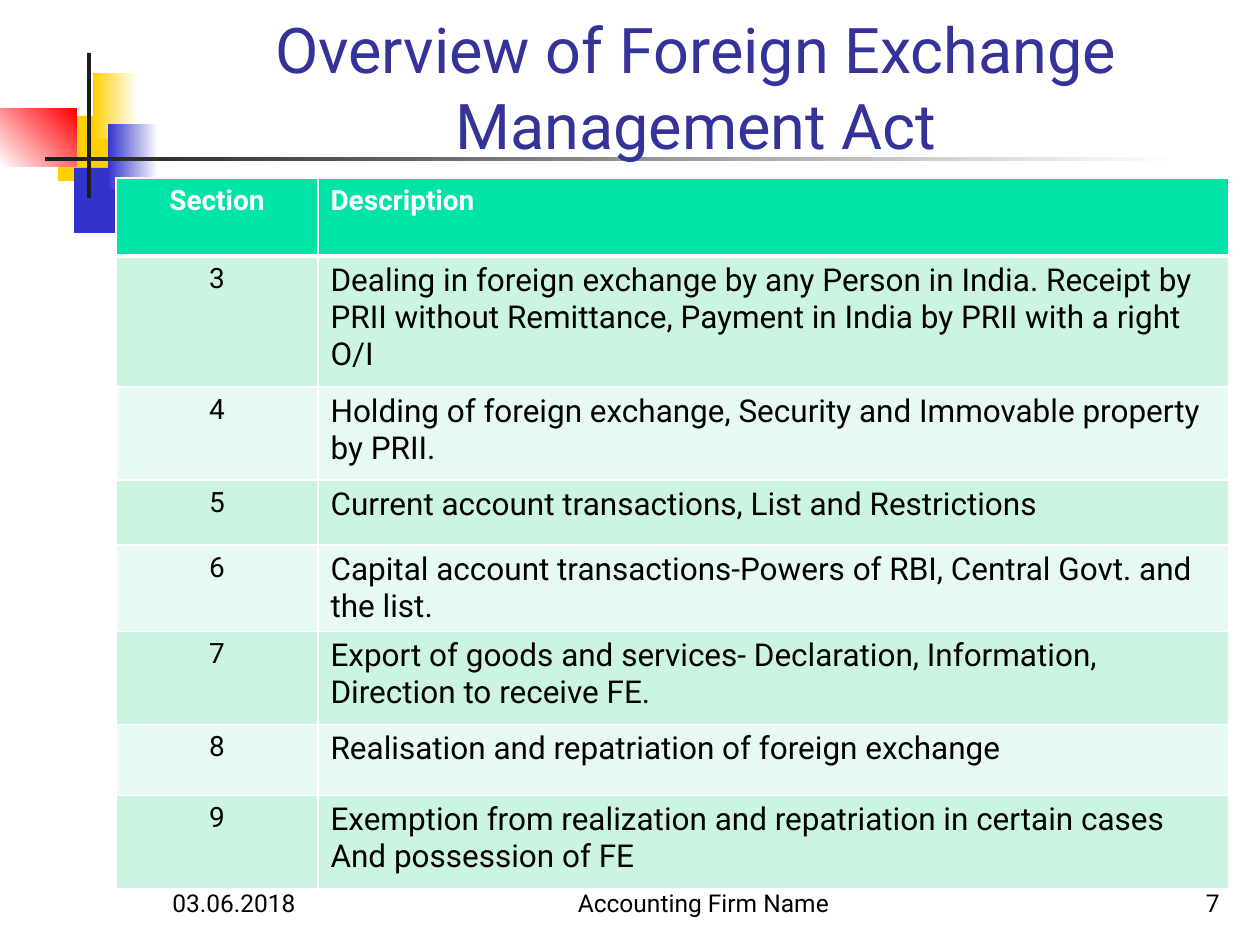
from pptx import Presentation, util as u
from pptx.dml.color import RGBColor
from pptx.enum import shapes, text
from pptx.oxml import parse_xml
from pptx.oxml.ns import nsdecls

PX = 914400 / 126
FONT = "Roboto"
LEFT, CENTER, RIGHT = text.PP_ALIGN.LEFT, text.PP_ALIGN.CENTER, text.PP_ALIGN.RIGHT

TITLE = "Overview of Foreign Exchange Management Act"
TITLE_BOX = (159, 29, 1074, 139)

# left, top, width, height, colours, gradient angle
DECOR = [
    ((58, 116, 60, 65), ["FFCF01"], 0),
    ((74, 168, 58, 65), ["3333CC"], 0),
    ((93, 73, 45, 66), ["FFCF01", "FFFFFF"], 0),
    ((108, 124, 50, 65), ["3333CC", "FFFFFF"], 0),
    ((0, 109, 77, 58), ["FFFFFF", "FF0000"], 45),
    ((87, 53, 4, 145), ["1C1C1C"], 0),
    ((45, 157, 1134, 4), ["1C1C1C", "FFFFFF"], 0),
]

FOOTER = [
    ("03.06.2018", (160, 861, 262, 63), LEFT),
    ("Accounting Firm Name", (504, 861, 399, 63), CENTER),
    ("7", (970, 861, 262, 63), RIGHT),
]

ROWS = [
    ("Section", "Description", 78),
    ("3", "Dealing in foreign exchange by any Person in India. Receipt by PRII "
          "without Remittance, Payment in India by PRII with a right O/I", 131),
    ("4", "Holding of foreign exchange, Security and Immovable property by PRII.", 93),
    ("5", "Current account transactions, List and Restrictions", 65),
    ("6", "Capital account transactions-Powers of RBI, Central Govt. and the list.", 86),
    ("7", "Export of goods and services- Declaration, Information, "
          "Direction to receive FE.", 93),
    ("8", "Realisation and repatriation of foreign exchange", 71),
    ("9", "Exemption from realization and repatriation in certain cases\n"
          "And possession of FE", 93),
]
TABLE_AT = (116, 178)
COLS = (202, 911)
HEADER_FILL, BANDS = "00E4A8", ("E7FAF1", "CCF5E1")


def px(*values):
    return [u.Emu(round(v * PX)) for v in values]


def rgb(value):
    return RGBColor.from_string(value)


def style(tf, size, color, align, bold=False):
    for p in tf.paragraphs:
        p.alignment = align
        for r in p.runs:
            r.font.name, r.font.size, r.font.bold = FONT, u.Pt(size), bold
            r.font.color.rgb = rgb(color)


def add_decor(s, box, colors, angle):
    sp = s.shapes.add_shape(shapes.MSO_SHAPE.RECTANGLE, *px(*box))
    sp.shadow.inherit = False
    sp.line.fill.background()
    if len(colors) == 1:
        sp.fill.solid()
        sp.fill.fore_color.rgb = rgb(colors[0])
    else:
        sp.fill.gradient()
        sp.fill.gradient_angle = angle
        for stop, color in zip(sp.fill.gradient_stops, colors):
            stop.color.rgb = rgb(color)


def set_borders(cell, top, bottom):
    tc_pr = cell._tc.get_or_add_tcPr()
    for i, (side, width) in enumerate((("L", 1), ("R", 1), ("T", top), ("B", bottom))):
        tc_pr.insert(i, parse_xml(
            f'<a:ln{side} {nsdecls("a")} w="{u.Pt(width)}"><a:solidFill>'
            f'<a:srgbClr val="FFFFFF"/></a:solidFill></a:ln{side}>'))


def add_sections(s):
    heights = [row[-1] for row in ROWS]
    frame = s.shapes.add_table(len(ROWS), len(COLS),
                               *px(*TABLE_AT, sum(COLS), sum(heights)))
    table = frame.table
    for col, width in zip(table.columns, px(*COLS)):
        col.width = width
    for i, (section, description, height) in enumerate(ROWS):
        header = i == 0
        table.rows[i].height = px(height)[0]
        for j, words in enumerate((section, description)):
            cell = table.cell(i, j)
            cell.text_frame.text = words
            style(cell.text_frame, 18 if j and not header else 16,
                  "FFFFFF" if header else "000000", LEFT if j else CENTER, header)
            cell.fill.solid()
            cell.fill.fore_color.rgb = rgb(HEADER_FILL if header else BANDS[i % 2])
            set_borders(cell, 3 if i == 1 else 1, 3 if header else 1)


def main():
    prs = Presentation()
    prs.slide_width, prs.slide_height = u.Inches(10), u.Inches(7.5)
    s = prs.slides.add_slide(prs.slide_layouts[5])

    for box, colors, angle in DECOR:
        add_decor(s, box, colors, angle)

    for words, box, align in FOOTER:
        tf = s.shapes.add_textbox(*px(*box)).text_frame
        tf.word_wrap = True
        tf.vertical_anchor = text.MSO_ANCHOR.BOTTOM
        tf.text = words
        style(tf, 14, "000000", align)

    title = s.shapes.title
    title.left, title.top, title.width, title.height = px(*TITLE_BOX)
    tf = title.text_frame
    tf.text = TITLE
    tf.word_wrap = True
    tf.auto_size = text.MSO_AUTO_SIZE.NONE
    tf.vertical_anchor = text.MSO_ANCHOR.BOTTOM
    style(tf, 36, "333399", CENTER)
    s.shapes.element.append(title.element)

    add_sections(s)
    prs.save("out.pptx")


if __name__ == "__main__":
    main()
